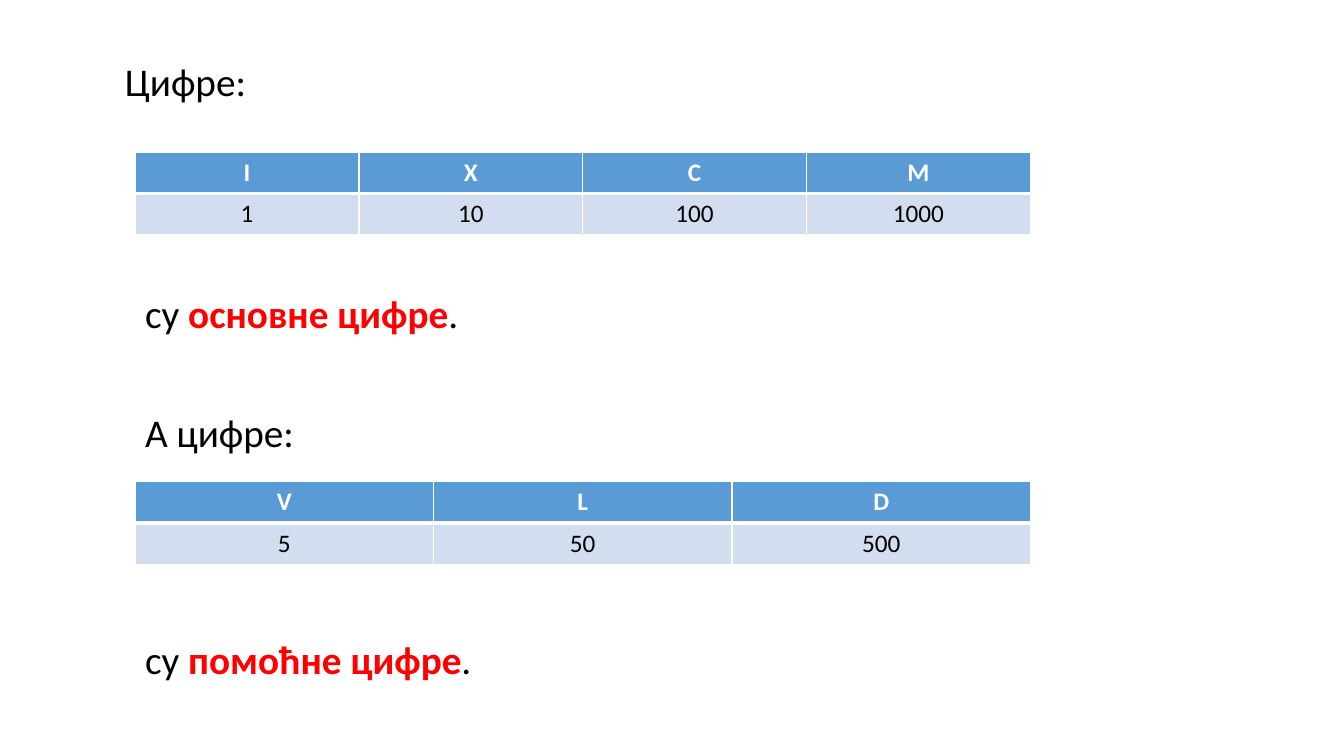
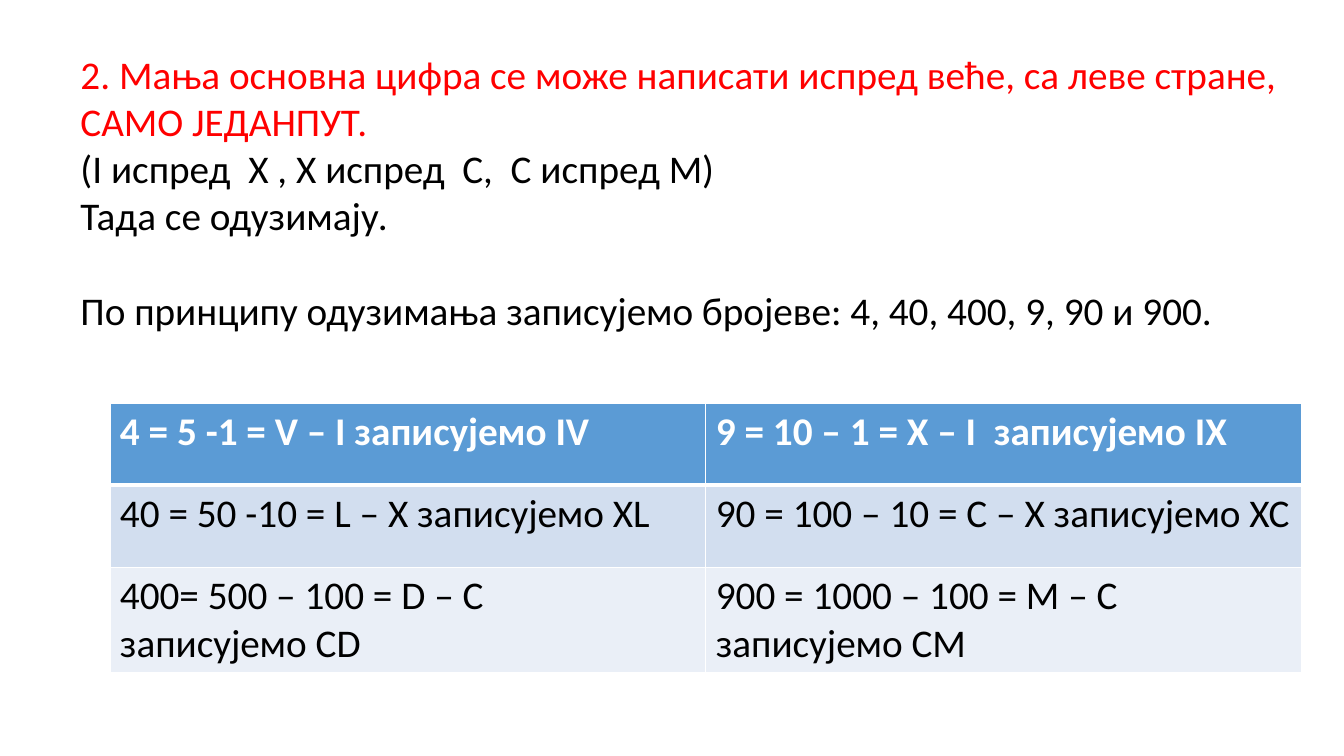
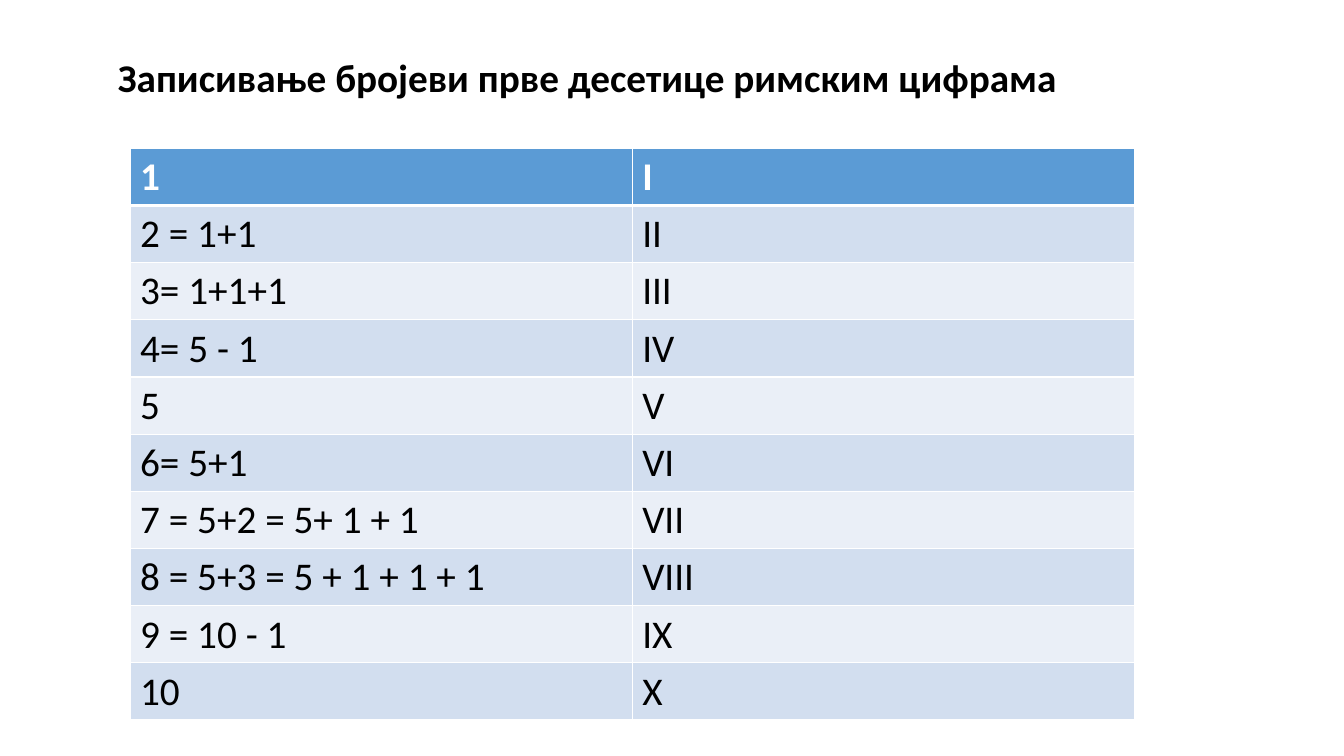
import pptx
import pptx.dml.color
import pptx.enum.text
import pptx.oxml
import pptx.oxml.ns
import pptx.util

PX = 9144
FONT = "Calibri"
BLACK = "000000"
WHITE = "FFFFFF"
RED = "FF0000"
HEADER = "5B9BD5"
BANDS = ("D2DEEF", "EAEFF7")
BODY_SIZE = 28
LINE_HEIGHT = 34
LEFT = pptx.enum.text.PP_ALIGN.LEFT
CENTER = pptx.enum.text.PP_ALIGN.CENTER


def px(n):
    return pptx.util.Emu(n * PX)


def rgb(color):
    return pptx.dml.color.RGBColor.from_string(color)


def add_run(p, text, color=BLACK, bold=False, size=BODY_SIZE):
    r = p.add_run()
    r.text = text
    r.font.name = FONT
    r.font.size = pptx.util.Pt(size)
    r.font.bold = bold
    r.font.color.rgb = rgb(color)


def add_paragraph(tf, index):
    return tf.paragraphs[0] if index == 0 else tf.add_paragraph()


def add_text(s, left, top, width, height, *paragraphs):
    tf = s.shapes.add_textbox(px(left), px(top), px(width), px(height)).text_frame
    tf.word_wrap = True
    for i, runs in enumerate(paragraphs):
        p = add_paragraph(tf, i)
        for run in runs:
            add_run(p, *run)
    return tf


def set_borders(cell, top, bottom):
    tcPr = cell._tc.get_or_add_tcPr()
    widths = {"lnL": 1, "lnR": 1, "lnT": top, "lnB": bottom}
    for i, (side, width) in enumerate(widths.items()):
        line = pptx.oxml.parse_xml(
            f'<a:{side} {pptx.oxml.ns.nsdecls("a")} w="{pptx.util.Pt(width)}">'
            f'<a:solidFill><a:srgbClr val="{WHITE}"/></a:solidFill></a:{side}>'
        )
        tcPr.insert(i, line)


def fill_cell(cell, text, row, size, align):
    header = row == 0
    cell.fill.solid()
    cell.fill.fore_color.rgb = rgb(HEADER if header else BANDS[(row - 1) % 2])
    set_borders(cell, 3 if row == 1 else 1, 3 if header else 1)
    for i, line in enumerate(text.split("\n")):
        p = add_paragraph(cell.text_frame, i)
        p.alignment = align
        add_run(p, line, WHITE if header else BLACK, header, size)


def add_table(s, left, top, width, heights, rows, size=BODY_SIZE, align=LEFT):
    count = len(rows[0])
    table = s.shapes.add_table(
        len(rows), count, px(left), px(top), px(width), px(sum(heights))
    ).table
    for column in table.columns:
        column.width = px(width // count)
    for i, (height, texts) in enumerate(zip(heights, rows)):
        table.rows[i].height = px(height)
        for j, text in enumerate(texts):
            fill_cell(table.cell(i, j), text, i, size, align)


def add_digit_table(s, top, digits, values):
    add_table(s, 134, top, 888, [41, 41], [digits, values], 18, CENTER)


def add_conclusion(s, top, width, height, term):
    add_text(s, 134, top, width, height, [("су ",), (term, RED, True), (".",)])


def add_digits_slide(s):
    add_text(s, 114, 52, 1055, 57, [("Цифре:",)])
    add_digit_table(s, 151, ["I", "X", "C", "M"], ["1", "10", "100", "1000"])
    add_conclusion(s, 282, 889, 57, "основне цифре")
    add_text(s, 134, 400, 889, 57, [("А цифре:",)])
    add_digit_table(s, 478, ["V", "L", "D"], ["5", "50", "500"])
    add_conclusion(s, 625, 839, 88, "помоћне цифре")


def add_subtraction_slide(s):
    tf = add_text(
        s, 70, 45, 1220, 293,
        [("2. Мања основна цифра се може написати испред веће, са леве стране, САМО ЈЕДАНПУТ.", RED)],
        [("(I испред  X , X испред  C,  C испред M)",)],
        [("Тада се одузимају.",)],
        [("По принципу одузимања записујемо бројеве: 4, 40, 400, 9, 90 и 900.",)],
    )
    tf.paragraphs[-1].space_before = pptx.util.Pt(LINE_HEIGHT)
    rows = [
        ["4 = 5 -1 = V – I записујемо IV", "9 = 10 – 1 = X – I  записујемо IX"],
        ["40 = 50 -10 = L – X записујемо XL", "90 = 100 – 10 = C – X записујемо XC"],
        ["400= 500 – 100 = D – C\nзаписујемо CD", "900 = 1000 – 100 = M – C записујемо СМ"],
    ]
    add_table(s, 109, 400, 1182, [81, 82, 104], rows)


def add_first_ten_slide(s):
    add_text(s, 107, 48, 1018, 57,
             [("Записивање бројеви прве десетице римским цифрама", BLACK, True)])
    rows = [
        ("1", "I"),
        ("2 = 1+1", "II"),
        ("3= 1+1+1", "III"),
        ("4= 5 - 1", "IV"),
        ("5", "V"),
        ("6= 5+1", "VI"),
        ("7 = 5+2 = 5+ 1 + 1", "VII"),
        ("8 = 5+3 = 5 + 1 + 1 + 1", "VIII"),
        ("9 = 10 - 1", "IX"),
        ("10", "X"),
    ]
    add_table(s, 129, 147, 996, [56] * len(rows), rows)


def main():
    prs = pptx.Presentation()
    prs.slide_width = px(1333)
    prs.slide_height = px(750)
    for build in (add_digits_slide, add_subtraction_slide, add_first_ten_slide):
        build(prs.slides.add_slide(prs.slide_layouts[6]))
    prs.save("out.pptx")


if __name__ == "__main__":
    main()
